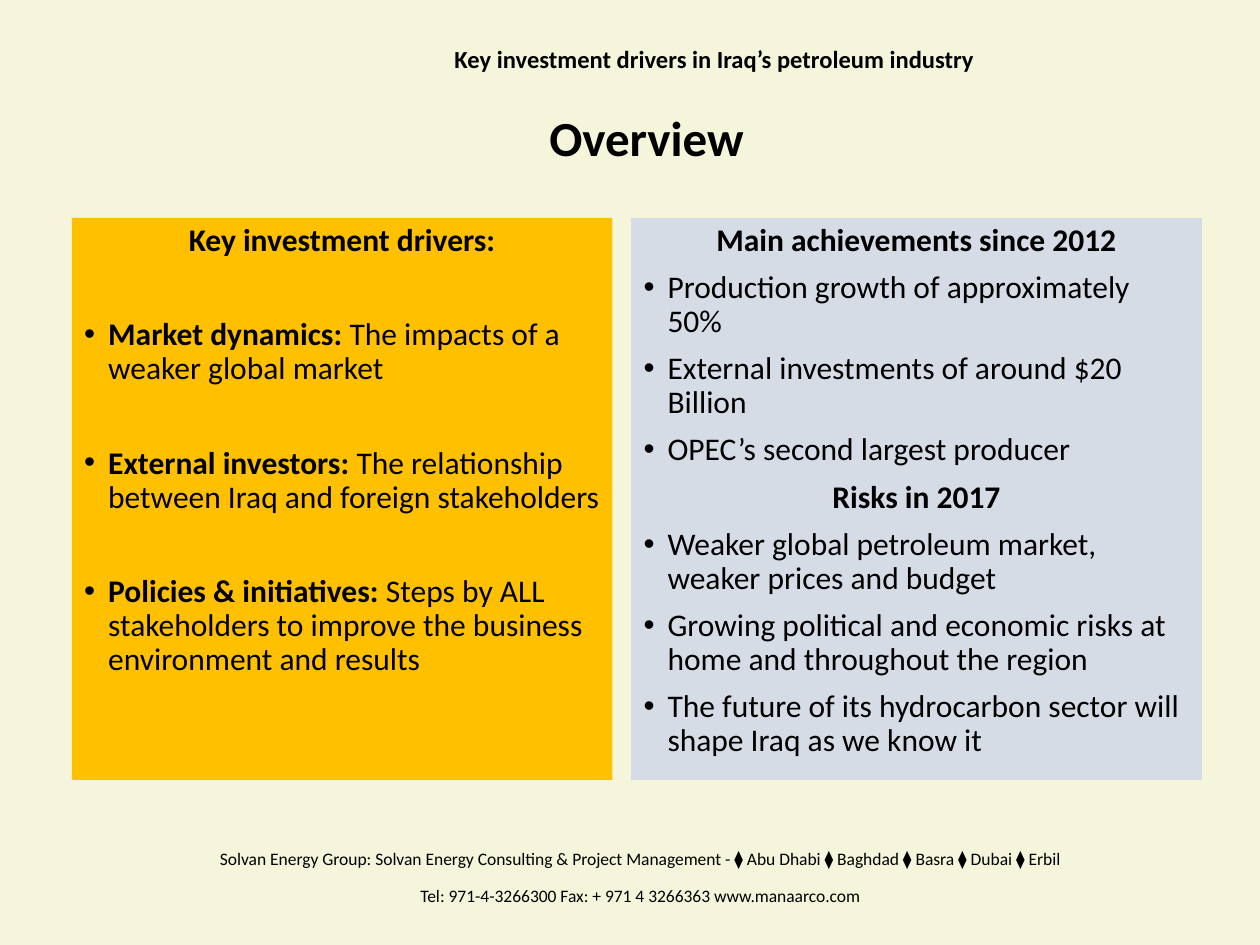
from lxml import etree
from pptx import Presentation, util as u
from pptx.dml.color import RGBColor
from pptx.enum import shapes, text
from pptx.oxml import ns

CREAM = RGBColor(0xF5, 0xF5, 0xDC)
AMBER = RGBColor(0xFF, 0xC0, 0x00)
PALE_BLUE = RGBColor(0xD6, 0xDC, 0xE5)
BLACK = RGBColor(0x00, 0x00, 0x00)
FONT = "Calibri"
WIDTH, HEIGHT = u.Inches(10), u.Inches(7.5)
COLUMN, ROW = WIDTH // 100, HEIGHT // 75
BODY_SIZE, BODY_GAP, WIDE_GAP = 18, 7.5, 34.5
HANGING = u.Inches(0.19)

FOOTER_BOX = (7.7, 67.1, 86.2, 6.8)
TITLE_BOX = (7.2, 8.3, 88.2, 5.7)
DRIVERS_BOX = (5.7, 17.3, 42.9, 44.6)
HEADER_BOX = (20.2, 3.3, 73, 4.5)
OUTLOOK_BOX = (50.1, 17.3, 45.3, 44.6)

FOOTER_LINES = [
    "Solvan Energy Group: Solvan Energy Consulting & Project Management - "
    "⧫ Abu Dhabi ⧫ Baghdad ⧫ Basra ⧫ Dubai ⧫ Erbil",
    "Tel: 971-4-3266300 Fax: + 971 4 3266363 www.manaarco.com",
]
DRIVERS = [
    ("Market dynamics:", " The impacts of a weaker global market"),
    ("External investors:", " The relationship between Iraq and foreign stakeholders"),
    ("Policies & initiatives: ",
     "Steps by ALL stakeholders to improve the business environment and results"),
]
OUTLOOK = {
    "Main achievements since 2012": [
        "Production growth of approximately 50%",
        "External investments of around $20 Billion",
        "OPEC’s second largest producer",
    ],
    "Risks in 2017": [
        "Weaker global petroleum market, weaker prices and budget",
        "Growing political and economic risks at home and throughout the region",
        "The future of its hydrocarbon sector will shape Iraq as we know it",
    ],
}


def place(box):
    """Turn a box in grid columns and rows into slide lengths."""
    left, top, width, height = box
    return [round(length) for length in
            (left * COLUMN, top * ROW, width * COLUMN, height * ROW)]


def prepare_frame(shape, anchor=text.MSO_ANCHOR.TOP):
    """Return the wrapped text frame of a shape."""
    frame = shape.text_frame
    frame.word_wrap = True
    frame.vertical_anchor = anchor
    return frame


def add_paragraph(frame, runs, size, gap=0, bullet=False):
    """Add a centred or bulleted paragraph made of (words, bold) runs."""
    first = not frame.paragraphs[0].runs
    paragraph = frame.paragraphs[0] if first else frame.add_paragraph()
    paragraph.line_spacing = 0.9
    paragraph.space_before = u.Pt(0 if first else gap)
    paragraph.alignment = text.PP_ALIGN.LEFT if bullet else text.PP_ALIGN.CENTER
    if bullet:
        properties = paragraph._p.get_or_add_pPr()
        properties.set("marL", str(HANGING))
        properties.set("indent", str(-HANGING))
        etree.SubElement(properties, ns.qn("a:buFont"), typeface="Arial")
        etree.SubElement(properties, ns.qn("a:buChar"), char="•")
    for words, bold in runs:
        run = paragraph.add_run()
        run.text = words
        run.font.name = FONT
        run.font.size = u.Pt(size)
        run.font.bold = bold
        run.font.color.rgb = BLACK


def add_heading(slide, box, words, size, anchor=text.MSO_ANCHOR.TOP):
    """Place one bold centred line in its box."""
    frame = prepare_frame(slide.shapes.add_textbox(*place(box)), anchor)
    add_paragraph(frame, [(words, True)], size)


def add_footer(slide, box):
    """Place the contact lines in the footer box."""
    frame = prepare_frame(slide.shapes.add_textbox(*place(box)))
    frame.margin_left = frame.margin_right = u.Inches(0.07)
    frame.margin_top = frame.margin_bottom = u.Inches(0.04)
    for line in FOOTER_LINES:
        add_paragraph(frame, [(line, False)], 10, gap=10)


def add_panel(slide, box, colour):
    """Draw a filled panel and return its text frame."""
    panel = slide.shapes.add_shape(shapes.MSO_SHAPE.RECTANGLE, *place(box))
    panel.shadow.inherit = False
    panel.fill.solid()
    panel.fill.fore_color.rgb = colour
    panel.line.fill.background()
    return prepare_frame(panel)


def add_drivers(slide, box):
    """Fill the left panel with the widely spaced drivers."""
    frame = add_panel(slide, box, AMBER)
    add_paragraph(frame, [("Key investment drivers:", True)], BODY_SIZE)
    for driver, detail in DRIVERS:
        add_paragraph(frame, [(driver, True), (detail, False)], BODY_SIZE, WIDE_GAP, bullet=True)


def add_outlook(slide, box):
    """Fill the right panel with achievements and risks."""
    frame = add_panel(slide, box, PALE_BLUE)
    for heading, points in OUTLOOK.items():
        add_paragraph(frame, [(heading, True)], BODY_SIZE, BODY_GAP)
        for point in points:
            add_paragraph(frame, [(point, False)], BODY_SIZE, BODY_GAP, bullet=True)


def main():
    """Build and save the overview slide."""
    presentation = Presentation()
    presentation.slide_width, presentation.slide_height = WIDTH, HEIGHT
    slide = presentation.slides.add_slide(presentation.slide_layouts[6])
    slide.background.fill.solid()
    slide.background.fill.fore_color.rgb = CREAM
    add_footer(slide, FOOTER_BOX)
    add_heading(slide, TITLE_BOX, "Overview", 28, text.MSO_ANCHOR.MIDDLE)
    add_drivers(slide, DRIVERS_BOX)
    add_heading(slide, HEADER_BOX, "Key investment drivers in Iraq’s petroleum industry", 14)
    add_outlook(slide, OUTLOOK_BOX)
    presentation.save("out.pptx")


if __name__ == "__main__":
    main()
